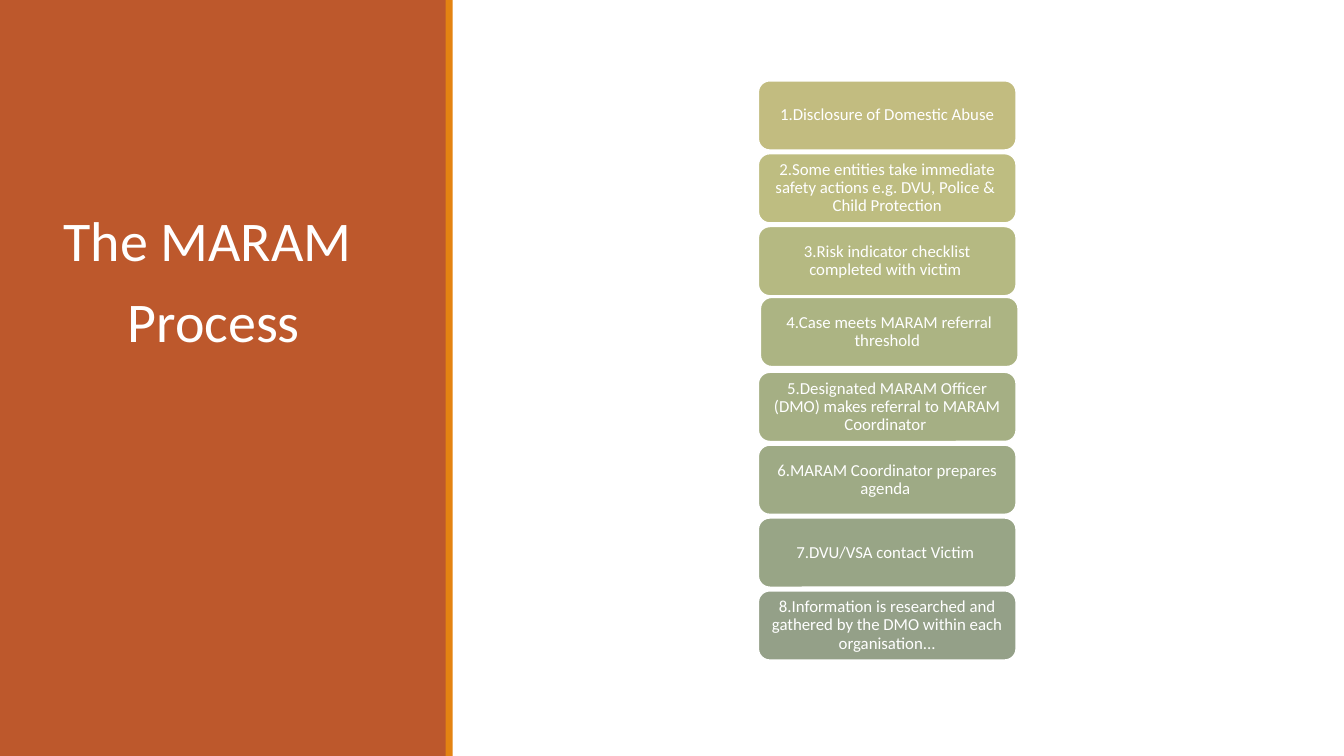
from pptx import Presentation
from pptx.dml.color import RGBColor
from pptx.enum.shapes import MSO_SHAPE
from pptx.enum.text import MSO_ANCHOR, PP_ALIGN
from pptx.util import Inches, Pt

RECTANGLE = MSO_SHAPE.RECTANGLE
ROUNDED = MSO_SHAPE.ROUNDED_RECTANGLE
TOP = MSO_ANCHOR.TOP
MIDDLE = MSO_ANCHOR.MIDDLE
CENTER = PP_ALIGN.CENTER

COLORS = {"white": "FFFFFF", "panel": "BD582C", "stripe": "E48312"}
FONT = "Calibri"

TITLE = ["The MARAM ", "Process"]
STEPS = [
    ("1.Disclosure of Domestic Abuse", "C2BC80"),
    ("2.Some entities take immediate safety actions e.g. DVU, Police &  Child Protection", "BEBD81"),
    ("3.Risk indicator checklist completed with victim ", "B5B982"),
    ("4.Case meets MARAM referral threshold ", "ACB483"),
    ("5.Designated MARAM Officer (DMO) makes referral to MARAM Coordinator ", "A5AF84"),
    ("6.MARAM Coordinator prepares agenda ", "9EAA85"),
    ("7.DVU/VSA contact Victim ", "98A586"),
    ("8.Information is researched and gathered by the DMO within each organisation...", "94A088"),
]
BANDS = [("panel", 0, 4.43), ("stripe", 4.42, 0.07)]

SLIDE_WIDTH, SLIDE_HEIGHT = 13.33, 7.5
STEP_LEFT, STEP_WIDTH, STEP_HEIGHT = 7.52, 2.56, 0.69
FIRST_TOP, LAST_TOP = 0.8, 5.86
STEP_PITCH = (LAST_TOP - FIRST_TOP) / (len(STEPS) - 1)
NUDGES = {3: (0.02, -0.02)}

TITLE_FRAME = {"word_wrap": True, "vertical_anchor": TOP}
STEP_FRAME = {
    "word_wrap": True,
    "vertical_anchor": MIDDLE,
    "margin_left": Inches(0.05),
    "margin_right": Inches(0.05),
    "margin_top": Inches(0.03),
    "margin_bottom": Inches(0.03),
}
STEP_PARAGRAPH = {"alignment": CENTER, "line_spacing": 0.9}
TITLE_PARAGRAPH = {**STEP_PARAGRAPH, "space_before": Pt(12), "space_after": Pt(2)}


def apply(target, values):
    for name, value in values.items():
        setattr(target, name, value)


def add_block(slide, kind, bounds, color):
    block = slide.shapes.add_shape(kind, *map(Inches, bounds))
    block.shadow.inherit = False
    block.fill.solid()
    block.fill.fore_color.rgb = RGBColor.from_string(color)
    block.line.fill.background()
    return block


def write(frame, lines, size, frame_format, paragraph_format):
    apply(frame, frame_format)
    for index, line in enumerate(lines):
        paragraph = frame.add_paragraph() if index else frame.paragraphs[0]
        apply(paragraph, paragraph_format)
        run = paragraph.add_run()
        run.text = line
        apply(run.font, {"name": FONT, "size": Pt(size)})
        run.font.color.rgb = RGBColor.from_string(COLORS["white"])


def main():
    deck = Presentation()
    deck.slide_width = Inches(SLIDE_WIDTH)
    deck.slide_height = Inches(SLIDE_HEIGHT)
    slide = deck.slides.add_slide(deck.slide_layouts[6])

    for color, left, width in BANDS:
        add_block(slide, RECTANGLE, (left, 0, width, SLIDE_HEIGHT), COLORS[color])

    for index, (step, color) in enumerate(STEPS):
        shift_x, shift_y = NUDGES.get(index, (0, 0))
        top = FIRST_TOP + index * STEP_PITCH + shift_y
        bounds = (STEP_LEFT + shift_x, top, STEP_WIDTH, STEP_HEIGHT)
        box = add_block(slide, ROUNDED, bounds, color)
        box.line.color.rgb = RGBColor.from_string(COLORS["white"])
        box.line.width = Pt(1.25)
        write(box.text_frame, [step], 12, STEP_FRAME, STEP_PARAGRAPH)

    title = slide.shapes.add_textbox(*map(Inches, (0.37, 2.07, 3.5, 3.73)))
    write(title.text_frame, TITLE, 40, TITLE_FRAME, TITLE_PARAGRAPH)
    deck.save("out.pptx")


if __name__ == "__main__":
    main()
